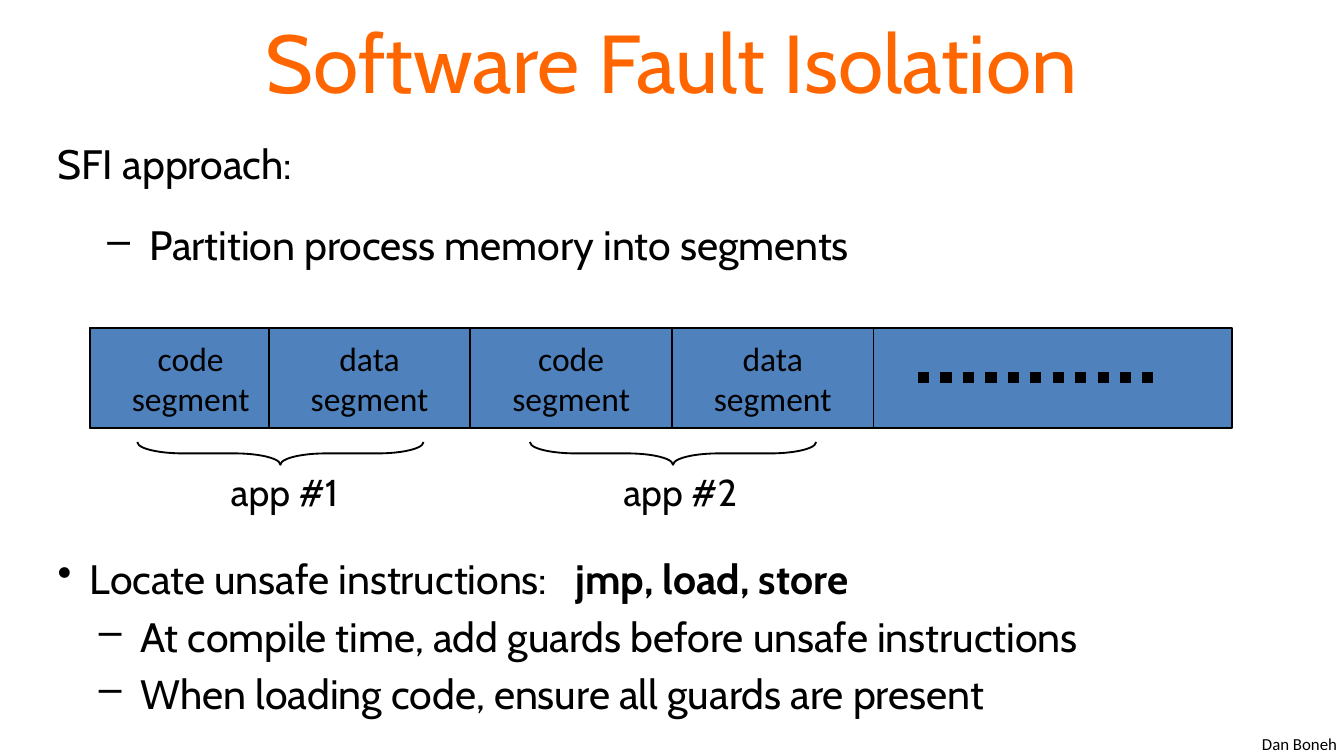
from dataclasses import dataclass
from pptx import Presentation
from pptx.dml.color import RGBColor as Rgb
from pptx.enum.dml import MSO_LINE as Dash
from pptx.enum.shapes import MSO_CONNECTOR as Link, MSO_SHAPE as Kind
from pptx.enum.text import MSO_ANCHOR as Anchor, PP_ALIGN as Align
from pptx.oxml.ns import qn
from pptx.util import Cm, Pt

HEX = {"title": "FF6600", "ink": "000000", "bar": "4F81BD"}
HEAD, BODY = "Cabin", "Calibri"


@dataclass
class Run:
    text: str
    size: float = 22
    font: str = HEAD
    color: str = "ink"
    bold: bool = False
    track: int = 0  # letter spacing, hundredths of a point


@dataclass
class Para:
    runs: list[Run]
    align: Align = Align.LEFT
    level: int = 0
    mark: str = ""
    left: float = 0
    hang: float = 0
    gap: float = 0


@dataclass
class Box:
    x: float
    y: float
    w: float
    h: float

    def dims(self) -> list[Cm]:
        return [Cm(v) for v in (self.x, self.y, self.w, self.h)]


def write(frame, paras: list[Para], wrap: bool = True, anchor=Anchor.TOP) -> None:
    frame.word_wrap = wrap
    frame.vertical_anchor = anchor
    for i, item in enumerate(paras):
        par = frame.add_paragraph() if i else frame.paragraphs[0]
        par.alignment, par.level = item.align, item.level
        par.space_before = Pt(item.gap)
        if item.mark:
            props = par._p.get_or_add_pPr()
            props.set("marL", str(Cm(item.left)))
            props.set("indent", str(-Cm(item.hang)))
            sign = props.makeelement(qn("a:buChar"), {"char": item.mark})
            props.append(sign)
        for part in item.runs:
            run = par.add_run()
            run.text = part.text
            font = run.font
            font.size, font.name, font.bold = Pt(part.size), part.font, part.bold
            font.color.rgb = Rgb.from_string(HEX[part.color])
            if part.track:
                font._element.set("spc", str(part.track))


def label(slide, box: Box, paras: list[Para], **opts) -> None:
    write(slide.shapes.add_textbox(*box.dims()).text_frame, paras, **opts)


def shape(slide, kind: Kind, box: Box, fill: str = ""):
    item = slide.shapes.add_shape(kind, *box.dims())
    item.shadow.inherit = False
    if fill:
        item.fill.solid()
        item.fill.fore_color.rgb = Rgb.from_string(HEX[fill])
    else:
        item.fill.background()
    item.line.color.rgb = Rgb.from_string(HEX["ink"])
    item.line.width = Pt(1)
    return item


def block(slide, box: Box, words: str = "") -> None:
    item = shape(slide, Kind.RECTANGLE, box, "bar")
    if words:
        paras = [Para([Run(w, 18, BODY)], Align.CENTER) for w in words.split()]
        write(item.text_frame, paras, wrap=False, anchor=Anchor.MIDDLE)


def app(slide, mid: float, name: str) -> None:
    thick, span, y = 0.43, 5.41, 8.57
    brace = shape(slide, Kind.LEFT_BRACE,
                  Box(mid - thick / 2, y - span / 2, thick, span))
    brace.rotation = 270
    brace.adjustments[0] = 2
    label(slide, Box(mid - 1.19, 8.74, 2.79, 1.12), [Para([Run(name, 20)])], wrap=False)


def dots(slide, x: float, end: float, y: float) -> None:
    line = slide.shapes.add_connector(Link.STRAIGHT, Cm(x), Cm(y), Cm(end), Cm(y))
    line.line.color.rgb = Rgb.from_string(HEX["ink"])
    line.line.width = Pt(6)
    line.line.dash_style = Dash.ROUND_DOT
    props = line._element.spPr
    props.append(props.makeelement(qn("a:effectLst"), {}))


def dash(text: str, left: float, gap: float = 4.4) -> Para:
    return Para([Run(text)], level=1, mark="–", left=left, hang=0.79, gap=gap)


def main() -> None:
    deck = Presentation()
    deck.slide_width, deck.slide_height = Cm(25.4), Cm(14.29)
    slide = deck.slides.add_slide(deck.slide_layouts[6])

    # Credit and title
    label(slide, Box(23.6, 13.74, 1.93, 0.64), [Para([Run("Dan Boneh", 9, BODY)])],
          wrap=False)
    label(slide, Box(1.27, -0.05, 22.86, 2.39),
          [Para([Run("Software Fault Isolation", 44, HEAD, "title")], Align.CENTER)],
          anchor=Anchor.MIDDLE)

    # Approach, above the memory bar
    label(slide, Box(0.84, 2.49, 24.13, 3), [
        Para([Run("SFI approach:")], gap=4.4),
        dash("Partition process memory into segments", 1.73, 17.3),
    ])

    # Guards, below the memory bar
    label(slide, Box(0.84, 10.34, 24.13, 3.6), [
        Para([Run("Locate unsafe instructions:"), Run(" ", track=1000),
              Run("jmp, load, store", bold=True)],
             mark="•", left=0.61, hang=0.61, gap=4.4),
        dash("At compile time, add guards before unsafe instructions", 1.57),
        dash("When loading code, ensure all guards are present", 1.57),
    ])

    # Memory bar with its segments
    top, tall, wide = 6.2, 1.9, 3.81
    block(slide, Box(1.7, top, 21.59, tall))
    for i, kind in enumerate(["code", "data"] * 2):
        x = 5.08 + (i - 1) * wide if i else 1.7
        block(slide, Box(x, top, wide, tall), f"{kind} segment")
    dots(slide, 17.35, 21.79, 7.14)

    # One brace per app
    for i in range(2):
        app(slide, 5.3 + i * 7.42, f"app #{i + 1}")

    deck.save("out.pptx")


if __name__ == "__main__":
    main()
